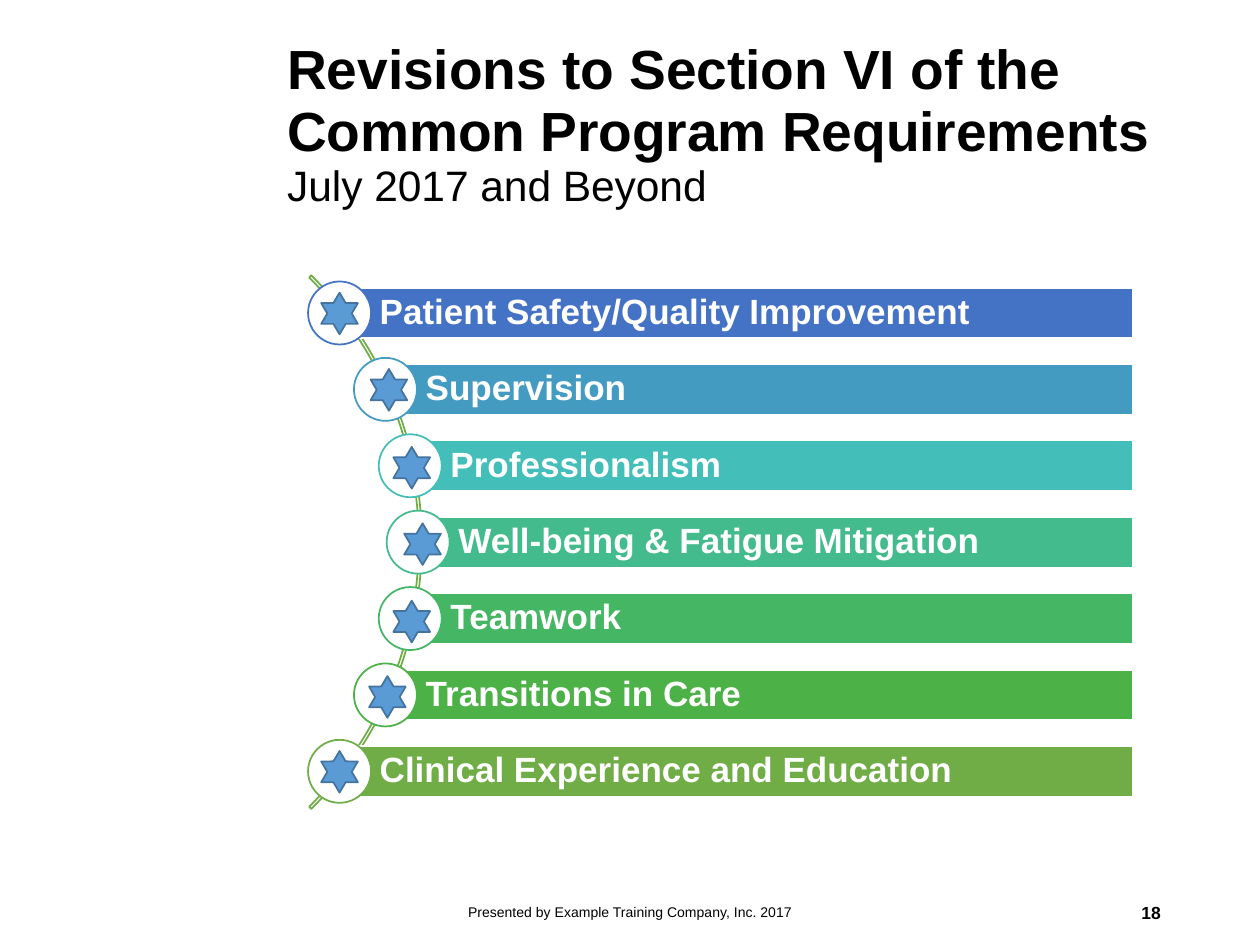
import math
import pptx
import pptx.util
import pptx.dml.color
import pptx.enum.shapes
import pptx.enum.text
from dataclasses import dataclass

Cm = pptx.util.Cm
Pt = pptx.util.Pt
SHAPE = pptx.enum.shapes.MSO_SHAPE
ALIGN = pptx.enum.text.PP_ALIGN

TITLE = "Revisions to Section VI of the Common Program Requirements"
SUBTITLE = "July 2017 and Beyond"
FOOTER = "Presented by Example Training Company, Inc. 2017"
PAGE_NUMBER = "18"
TOPICS = [
    ("Patient Safety/Quality Improvement", "4472C4", (0, 0.01)),
    ("Supervision", "449BC1", (0.07, 0.01)),
    ("Professionalism", "43BEB9", (0.03, 0.04)),
    ("Well-being & Fatigue Mitigation", "43BB8D", (0.09, 0.04)),
    ("Teamwork", "45B664", (0.03, 0.06)),
    ("Transitions in Care", "4CB146", (0.04, 0.04)),
    ("Clinical Experience and Education", "70AD47", (0, 0.01)),
]


@dataclass(frozen=True)
class Theme:
    font: str = "Arial"
    ink: str = "000000"
    paper: str = "FFFFFF"
    arc: str = "70AD47"
    star: str = "5B9BD5"
    star_edge: str = "43739E"
    title: float = 31.5
    subtitle: float = 24.3
    topic: float = 20
    footer: float = 8
    number: float = 10


THEME = Theme()
ARC_X, ARC_Y, ARC_SIZE = 0.9, 10.93, 15.21
NODE_RADIUS, ROW_STEP = 7.53, 1.54
BAR_RIGHT, BAR_HEIGHT = 22.83, 1.02
CIRCLE, STAR_WIDTH, STAR_HEIGHT = 1.27, 0.74, 0.84


def rgb(value):
    return pptx.dml.color.RGBColor.from_string(value)


def style_font(font, size, color, bold=False):
    font.name = THEME.font
    font.size = Pt(size)
    font.bold = bold
    font.color.rgb = rgb(color)


def add_box(page, left, top, width, height):
    box = page.shapes.add_textbox(Cm(left), Cm(top), Cm(width), Cm(height))
    box.text_frame.word_wrap = True
    box.text_frame.vertical_anchor = pptx.enum.text.MSO_ANCHOR.MIDDLE
    return box.text_frame.paragraphs[0]


def add_shape(page, kind, center_x, center_y, width, height, fill, line):
    shape = page.shapes.add_shape(kind, Cm(center_x - width / 2),
                                  Cm(center_y - height / 2), Cm(width), Cm(height))
    shape.shadow.inherit = False
    if fill:
        shape.fill.solid()
        shape.fill.fore_color.rgb = rgb(fill)
    else:
        shape.fill.background()
    shape.line.color.rgb = rgb(line)
    shape.line.width = Pt(1)
    return shape


def add_title(page):
    para = add_box(page, 5.54, 0.69, 19.18, 3.68)
    para.line_spacing = 0.94
    span = para.add_run()
    span.text = TITLE
    style_font(span.font, THEME.title, THEME.ink, True)
    para.add_line_break()
    span = para.add_run()
    span.text = SUBTITLE
    style_font(span.font, THEME.subtitle, THEME.ink)


def add_footer(page, text, left, width, align, size, bold):
    para = add_box(page, left, 17.88, width, 1.02)
    para.text = text
    para.alignment = align
    style_font(para.font, size, THEME.ink, bold)


def add_topic(page, text, color, x, y):
    bar = add_shape(page, SHAPE.RECTANGLE, (x + BAR_RIGHT) / 2, y,
                    BAR_RIGHT - x, BAR_HEIGHT, color, THEME.paper)
    frame = bar.text_frame
    frame.word_wrap = True
    frame.vertical_anchor = pptx.enum.text.MSO_ANCHOR.MIDDLE
    frame.margin_left = Cm(0.81)
    frame.margin_top = frame.margin_right = frame.margin_bottom = Cm(0.15)
    para = frame.paragraphs[0]
    para.text = text
    para.alignment = ALIGN.LEFT
    para.line_spacing = 0.9
    style_font(para.font, THEME.topic, THEME.paper, True)
    add_shape(page, SHAPE.OVAL, x, y, CIRCLE, CIRCLE, THEME.paper, color)


def main():
    deck = pptx.Presentation()
    deck.slide_width, deck.slide_height = Cm(25.4), Cm(19.05)
    page = deck.slides.add_slide(deck.slide_layouts[6])

    add_title(page)
    add_footer(page, FOOTER, 8.41, 8.59, ALIGN.CENTER, THEME.footer, False)
    add_footer(page, PAGE_NUMBER, 17.93, 5.72, ALIGN.RIGHT, THEME.number, True)

    arc = add_shape(page, SHAPE.BLOCK_ARC, ARC_X, ARC_Y, ARC_SIZE, ARC_SIZE,
                    None, THEME.arc)
    for index, value in enumerate((189, 27, 0.004)):
        arc.adjustments[index] = value

    for index, (text, color, (shift_x, shift_y)) in enumerate(TOPICS):
        offset = (index - (len(TOPICS) - 1) / 2) * ROW_STEP
        x = ARC_X + math.sqrt(NODE_RADIUS ** 2 - offset ** 2)
        y = ARC_Y + offset
        add_topic(page, text, color, x, y)
        add_shape(page, SHAPE.STAR_6_POINT, x + shift_x, y + shift_y,
                  STAR_WIDTH, STAR_HEIGHT, THEME.star, THEME.star_edge)

    deck.save("out.pptx")


if __name__ == "__main__":
    main()
